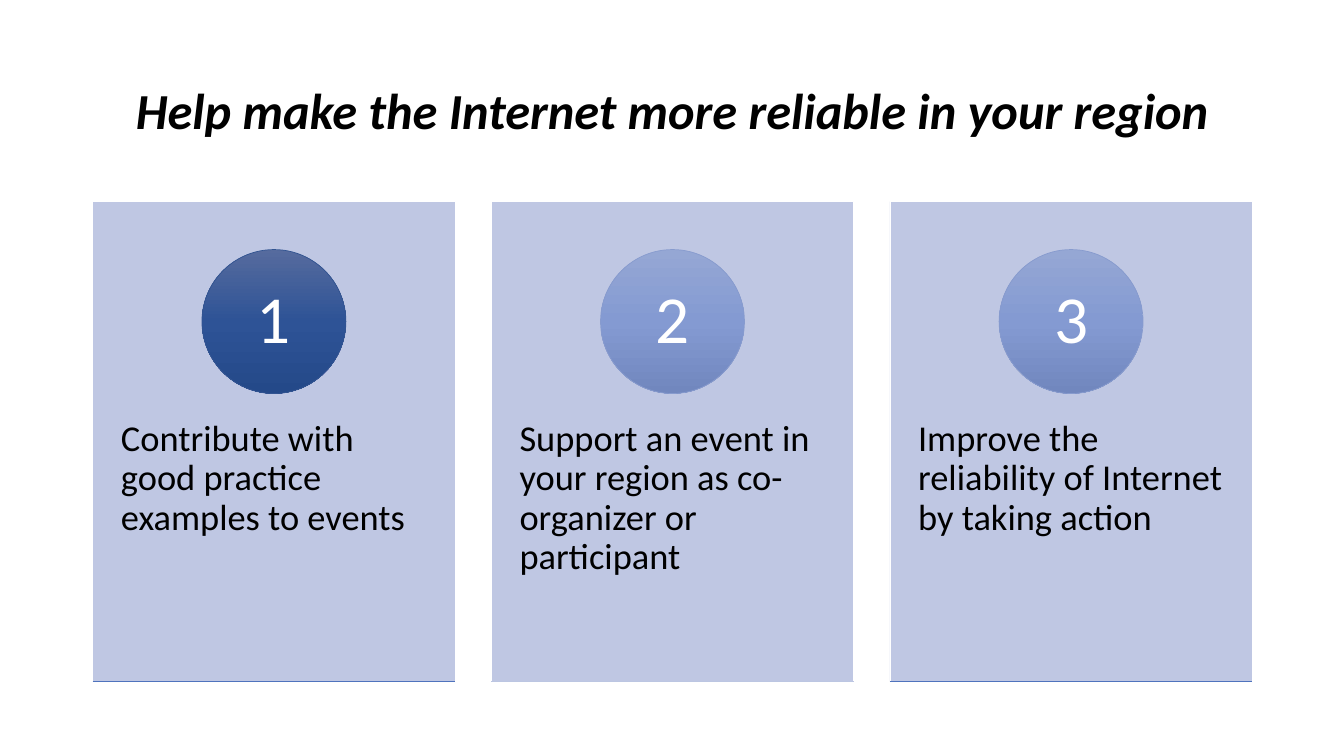
from dataclasses import dataclass

from lxml import etree
from pptx import Presentation
from pptx.dml.color import RGBColor
from pptx.enum.shapes import MSO_CONNECTOR, MSO_SHAPE
from pptx.enum.text import MSO_ANCHOR, PP_ALIGN
from pptx.oxml.ns import qn
from pptx.util import Inches, Pt

RECTANGLE, OVAL, STRAIGHT = MSO_SHAPE.RECTANGLE, MSO_SHAPE.OVAL, MSO_CONNECTOR.STRAIGHT
TOP, MIDDLE = MSO_ANCHOR.TOP, MSO_ANCHOR.MIDDLE
LEFT, CENTER = PP_ALIGN.LEFT, PP_ALIGN.CENTER


@dataclass(frozen=True)
class Theme:
    """Colours, font and sizes of the slide."""
    font: str = "Calibri"
    title_size: int = 36
    caption_size: int = 26
    number_size: int = 48
    line_width: float = 0.5
    line_spacing: float = 0.9
    ink: str = "000000"
    paper: str = "FFFFFF"
    card: str = "B9C2E1"
    card_opacity: int = 90
    dark_circle: tuple = ("566B9E", "2E5396", "244989")
    dark_outline: str = "325491"
    light_circle: tuple = ("95A7D4", "849AD2", "7187BE")
    light_outline: str = "879BCE"
    strong_base: str = "4F73BD"
    pale_base: str = "BCC6E2"


@dataclass(frozen=True)
class Box:
    """A rectangle in inches."""
    left: float
    top: float
    width: float
    height: float

    def emu(self):
        """Return the four lengths in slide units."""
        return [Inches(v) for v in (self.left, self.top, self.width, self.height)]


THEME = Theme()
SLIDE_WIDTH, SLIDE_HEIGHT = 13.33, 7.5
TITLE_BOX = Box(0.92, 0.4, 11.5, 1.45)
CARDS_BOX = Box(0.92, 2, 11.5, 4.76)
GAP_SHARE = 0.1
TITLE = "Help make the Internet more reliable in your region"
CARDS = [
    ("Contribute with good practice examples to events",
     THEME.dark_circle, THEME.dark_outline, THEME.strong_base),
    ("Support an event in your region as co-organizer or participant",
     THEME.light_circle, THEME.light_outline, THEME.pale_base),
    ("Improve the reliability of Internet by taking action",
     THEME.light_circle, THEME.light_outline, THEME.strong_base),
]


def rgb(code):
    """Return a colour object for a hex code."""
    return RGBColor.from_string(code)


def write(shape, text, size, color, align, anchor, insets=(0.1, 0.05)):
    """Set one formatted paragraph in a shape and return it."""
    frame = shape.text_frame
    frame.word_wrap = True
    frame.vertical_anchor = anchor
    frame.margin_left = frame.margin_right = Inches(insets[0])
    frame.margin_top = frame.margin_bottom = Inches(insets[1])
    frame.text = text
    para = frame.paragraphs[0]
    para.alignment = align
    para.line_spacing = THEME.line_spacing
    para.font.name = THEME.font
    para.font.size = Pt(size)
    para.font.color.rgb = rgb(color)
    return para


def add_outlined(slide, kind, box, outline):
    """Add a preset shape with a thin outline and no shadow."""
    shape = slide.shapes.add_shape(kind, *box.emu())
    shape.shadow.inherit = False
    shape.line.color.rgb = rgb(outline)
    shape.line.width = Pt(THEME.line_width)
    return shape


def fill_gradient(shape, colors):
    """Fill a shape from top to bottom with evenly spaced colours."""
    shape.fill.gradient()
    shape.fill.gradient_angle = 270
    stops = shape.fill._xPr.find(".//" + qn("a:gsLst"))
    for stop in list(stops):
        stops.remove(stop)
    for index, color in enumerate(colors):
        position = 100000 * index // (len(colors) - 1)
        stop = etree.SubElement(stops, qn("a:gs"), pos=str(position))
        etree.SubElement(stop, qn("a:srgbClr"), val=color)


def add_title(slide, box):
    """Place and format the slide title."""
    title = slide.shapes.title
    title.left, title.top, title.width, title.height = box.emu()
    para = write(title, TITLE, THEME.title_size, THEME.ink, CENTER, MIDDLE)
    para.font.bold = para.font.italic = True


def add_panel(slide, box):
    """Add the translucent background of a card."""
    panel = add_outlined(slide, RECTANGLE, box, THEME.paper)
    panel.fill.solid()
    panel.fill.fore_color.rgb = rgb(THEME.card)
    color = panel.fill._xPr.find(qn("a:solidFill")).find(qn("a:srgbClr"))
    etree.SubElement(color, qn("a:alpha"), val=str(THEME.card_opacity * 1000))


def add_base(slide, box, color):
    """Add the thin line along the bottom of a card."""
    left, top, width, height = box.emu()
    base = slide.shapes.add_connector(
        STRAIGHT, left, top + height, left + width, top + height)
    base.line.color.rgb = rgb(color)
    base.line.width = Pt(THEME.line_width)
    etree.SubElement(base._element.spPr, qn("a:effectLst"))


def add_card(slide, box, number, caption, circle_colors, outline, base_color):
    """Add a card with its caption, numbered circle and base line."""
    add_panel(slide, box)
    caption_box = Box(box.left, box.top + 0.38 * box.height, box.width, 0.6 * box.height)
    text_box = slide.shapes.add_textbox(*caption_box.emu())
    write(text_box, caption, THEME.caption_size, THEME.ink, LEFT, TOP, (0.28, 0.36))
    size = 0.3 * box.height
    circle_box = Box(box.left + (box.width - size) / 2, box.top + 0.1 * box.height, size, size)
    circle = add_outlined(slide, OVAL, circle_box, outline)
    fill_gradient(circle, circle_colors)
    write(circle, str(number), THEME.number_size, THEME.paper, CENTER, MIDDLE, (0.11, 0.01))
    add_base(slide, box, base_color)


def add_cards(slide, box):
    """Lay the cards out in equal columns."""
    count = len(CARDS)
    width = box.width / (count + (count - 1) * GAP_SHARE)
    for index, card in enumerate(CARDS):
        left = box.left + index * width * (1 + GAP_SHARE)
        add_card(slide, Box(left, box.top, width, box.height), index + 1, *card)


def main():
    """Build and save the deck."""
    deck = Presentation()
    deck.slide_width, deck.slide_height = Inches(SLIDE_WIDTH), Inches(SLIDE_HEIGHT)
    slide = deck.slides.add_slide(deck.slide_layouts.get_by_name("Title Only"))
    add_title(slide, TITLE_BOX)
    add_cards(slide, CARDS_BOX)
    deck.save("out.pptx")


if __name__ == "__main__":
    main()
